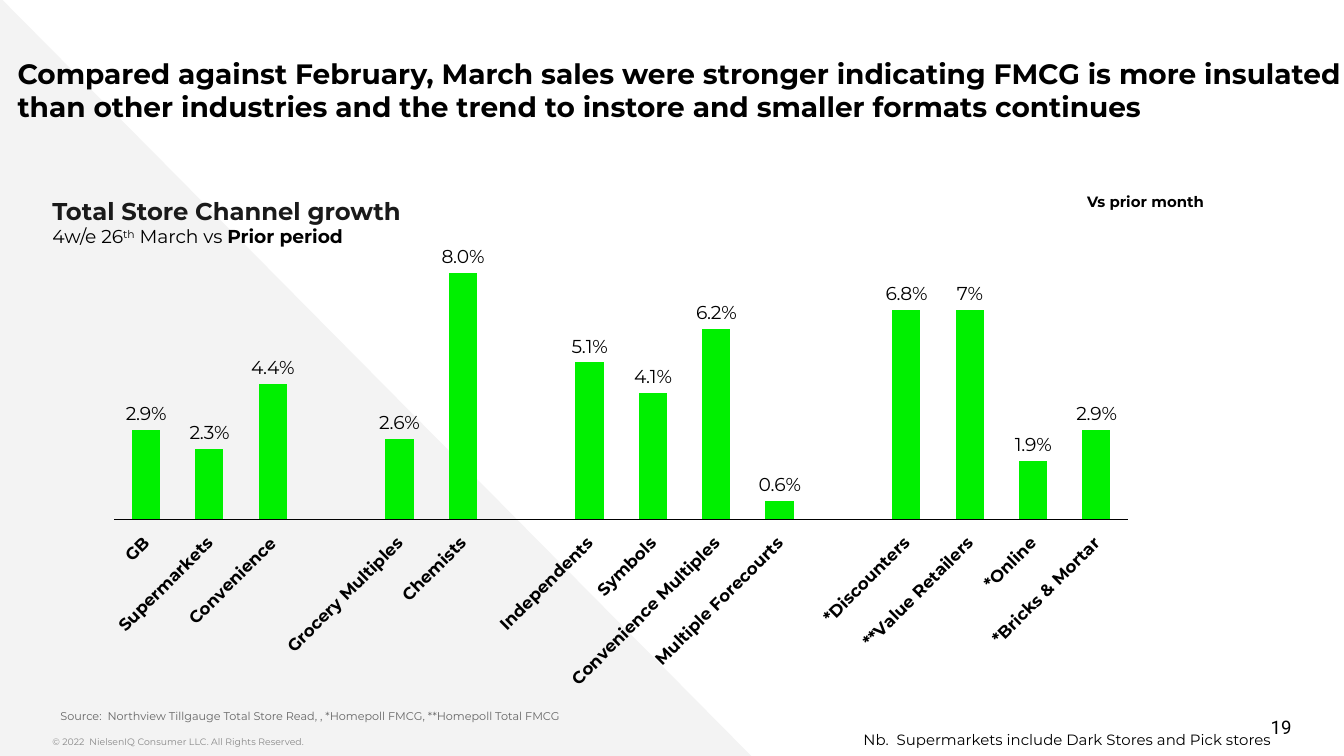
from lxml.etree import SubElement
from pptx import Presentation
from pptx.chart.data import CategoryChartData
from pptx.dml.color import RGBColor
from pptx.enum.chart import XL_CHART_TYPE, XL_LABEL_POSITION, XL_TICK_LABEL_POSITION, XL_TICK_MARK
from pptx.enum.shapes import MSO_SHAPE
from pptx.enum.text import MSO_ANCHOR, PP_ALIGN
from pptx.oxml import parse_xml
from pptx.oxml.ns import nsdecls, qn
from pptx.util import Pt

BLACK = RGBColor(0, 0, 0)
HEADING = RGBColor(0x1A, 0x1A, 0x1A)
SOURCE_GREY = RGBColor(0x66, 0x66, 0x66)
COPYRIGHT_GREY = RGBColor(0x88, 0x88, 0x88)
PANEL = RGBColor(0xF3, 0xF3, 0xF3)
GREEN = RGBColor(0, 0xF0, 0)

GROWTH = [
    ("GB", 0.029), ("Supermarkets", 0.023), ("Convenience", 0.044),
    (" ", None),
    ("Grocery Multiples", 0.026), ("Chemists", 0.08),
    ("", None),
    ("Independents", 0.051), ("Symbols", 0.041),
    ("Convenience Multiples", 0.062), ("Multiple Forecourts", 0.006),
    ("", None),
    ("*Discounters", 0.068), ("**Value Retailers", 0.068),
    ("*Online", 0.019), ("*Bricks & Mortar", 0.029),
]
ROUNDED_LABEL = 13
PLOT_AREA = {"x": 0.004, "y": 0.047, "w": 0.961, "h": 0.585}


def apply_format(target, values):
    for name, value in values.items():
        setattr(target, name, value)


def format_font(font, size, color=BLACK, bold=False, name="Montserrat"):
    apply_format(font, {"size": Pt(size), "bold": bold, "name": name})
    font.color.rgb = color


def format_frame(frame, side=0, edge=3.6, wrap=True, anchor=MSO_ANCHOR.TOP):
    apply_format(frame, {
        "margin_left": Pt(side), "margin_right": Pt(side),
        "margin_top": Pt(edge), "margin_bottom": Pt(edge),
        "word_wrap": wrap, "vertical_anchor": anchor,
    })


def add_run(paragraph, text, size, **font_values):
    run = paragraph.add_run()
    run.text = text
    format_font(run.font, size, **font_values)
    return run


def add_text(slide, box, text, size, align=PP_ALIGN.LEFT, frame_values=None, **font_values):
    shape = slide.shapes.add_textbox(*map(Pt, box))
    format_frame(shape.text_frame, **(frame_values or {}))
    paragraph = shape.text_frame.paragraphs[0]
    paragraph.alignment = align
    add_run(paragraph, text, size, **font_values)
    return paragraph


def add_panel(slide):
    panel = slide.shapes.add_shape(MSO_SHAPE.RIGHT_TRIANGLE, Pt(0), Pt(-1.4), Pt(402.5), Pt(406.4))
    panel.shadow.inherit = False
    panel.fill.solid()
    panel.fill.fore_color.rgb = PANEL
    panel.line.fill.background()


def format_title(slide):
    title = slide.shapes.title
    apply_format(title, {"left": Pt(9.4), "top": Pt(23), "width": Pt(710.6), "height": Pt(46.8)})
    format_frame(title.text_frame, edge=7.2)
    paragraph = title.text_frame.paragraphs[0]
    paragraph.alignment = PP_ALIGN.LEFT
    paragraph.line_spacing = 1.0
    add_run(paragraph, "Compared against February, March sales were stronger indicating FMCG is more "
            "insulated than other industries and the trend to instore and smaller formats continues",
            15, bold=True)
    slide.shapes._spTree.append(title._element)


def add_chart_heading(slide):
    paragraph = add_text(slide, (28.1, 101.5, 299.5, 35.3), "Total Store Channel growth", 13,
                         color=HEADING, bold=True)
    paragraph.space_after = Pt(12)
    paragraph.add_line_break()
    add_run(paragraph, "4w/e 26", 10)
    ordinal = add_run(paragraph, "th", 10)
    ordinal.font._element.set("baseline", "30000")
    add_run(paragraph, " March vs ", 10)
    add_run(paragraph, "Prior period", 10, bold=True)


def set_plot_area(chart):
    plot_area = chart._chartSpace.chart.plotArea
    for old_layout in plot_area.findall(qn("c:layout")):
        plot_area.remove(old_layout)
    layout = parse_xml(f"<c:layout {nsdecls('c')}/>")
    manual = SubElement(layout, qn("c:manualLayout"))
    settings = {"layoutTarget": "inner", "xMode": "edge", "yMode": "edge", **PLOT_AREA}
    for name, value in settings.items():
        SubElement(manual, qn(f"c:{name}")).set("val", str(value))
    plot_area.insert(0, layout)


def format_axes(chart):
    apply_format(chart.value_axis, {
        "visible": False, "has_major_gridlines": False,
        "minimum_scale": 0, "maximum_scale": 0.09,
    })
    axis = chart.category_axis
    apply_format(axis, {
        "tick_label_position": XL_TICK_LABEL_POSITION.LOW,
        "major_tick_mark": XL_TICK_MARK.NONE, "minor_tick_mark": XL_TICK_MARK.NONE,
    })
    axis.format.line.color.rgb = BLACK
    axis.format.line.width = Pt(0.75)
    format_font(axis.tick_labels.font, 9, bold=True)
    axis._element.find(qn("c:txPr")).find(qn("a:bodyPr")).set("rot", "-2700000")


def format_labels(series):
    labels = series.data_labels
    apply_format(labels, {
        "show_value": True, "number_format": "0.0%", "number_format_is_linked": False,
        "position": XL_LABEL_POSITION.OUTSIDE_END,
    })
    format_font(labels.font, 10)
    rounded = series.points[ROUNDED_LABEL].data_label
    format_font(rounded.font, 10)
    rounded.position = XL_LABEL_POSITION.OUTSIDE_END
    number_format = parse_xml(f'<c:numFmt {nsdecls("c")} formatCode="0%" sourceLinked="0"/>')
    series._element.find(".//" + qn("c:dLbl")).insert(1, number_format)


def add_growth_chart(slide):
    data = CategoryChartData(number_format="0.0%")
    data.categories = [channel for channel, growth in GROWTH]
    data.add_series("Series 1", [growth for channel, growth in GROWTH])
    chart = slide.shapes.add_chart(XL_CHART_TYPE.COLUMN_CLUSTERED, Pt(59), Pt(118.1),
                                   Pt(565.2), Pt(253.4), data).chart
    apply_format(chart, {"has_legend": False, "has_title": False})
    format_font(chart.font, 10)
    apply_format(chart.plots[0], {"gap_width": 125, "vary_by_categories": False})
    series = chart.plots[0].series[0]
    series.format.fill.solid()
    series.format.fill.fore_color.rgb = GREEN
    format_labels(series)
    format_axes(chart)
    set_plot_area(chart)


def main():
    presentation = Presentation()
    apply_format(presentation, {"slide_width": Pt(720), "slide_height": Pt(405)})
    slide = presentation.slides.add_slide(presentation.slide_layouts[5])
    note_frame = {"side": 7.2, "wrap": False}

    add_panel(slide)
    add_text(slide, (28.1, 391, 398.9, 14.4),
             "© 2022  NielsenIQ Consumer LLC. All Rights Reserved.", 5, color=COPYRIGHT_GREY)
    add_text(slide, (529.9, 378.7, 162, 21.6), "19", 10, PP_ALIGN.RIGHT,
             {"anchor": MSO_ANCHOR.MIDDLE}, name="Roboto")
    add_chart_heading(slide)
    format_title(slide)
    source = add_text(slide, (20.9, 376.6, 642.2, 14.4),
                      "Source:  Northview Tillgauge Total Store Read, , *Homepoll FMCG, "
                      "**Homepoll Total FMCG", 6, frame_values={"edge": 7.2}, color=SOURCE_GREY)
    source._p.get_or_add_pPr().set("marL", str(Pt(11.5)))
    add_growth_chart(slide)
    add_text(slide, (452.9, 388.1, 235.4, 17.3),
             "Nb.  Supermarkets include Dark Stores and Pick stores", 8, PP_ALIGN.RIGHT, note_frame)
    add_text(slide, (575.3, 99.4, 78.5, 17.3), "Vs prior month", 8,
             frame_values=note_frame, bold=True)
    presentation.save("out.pptx")


if __name__ == "__main__":
    main()
